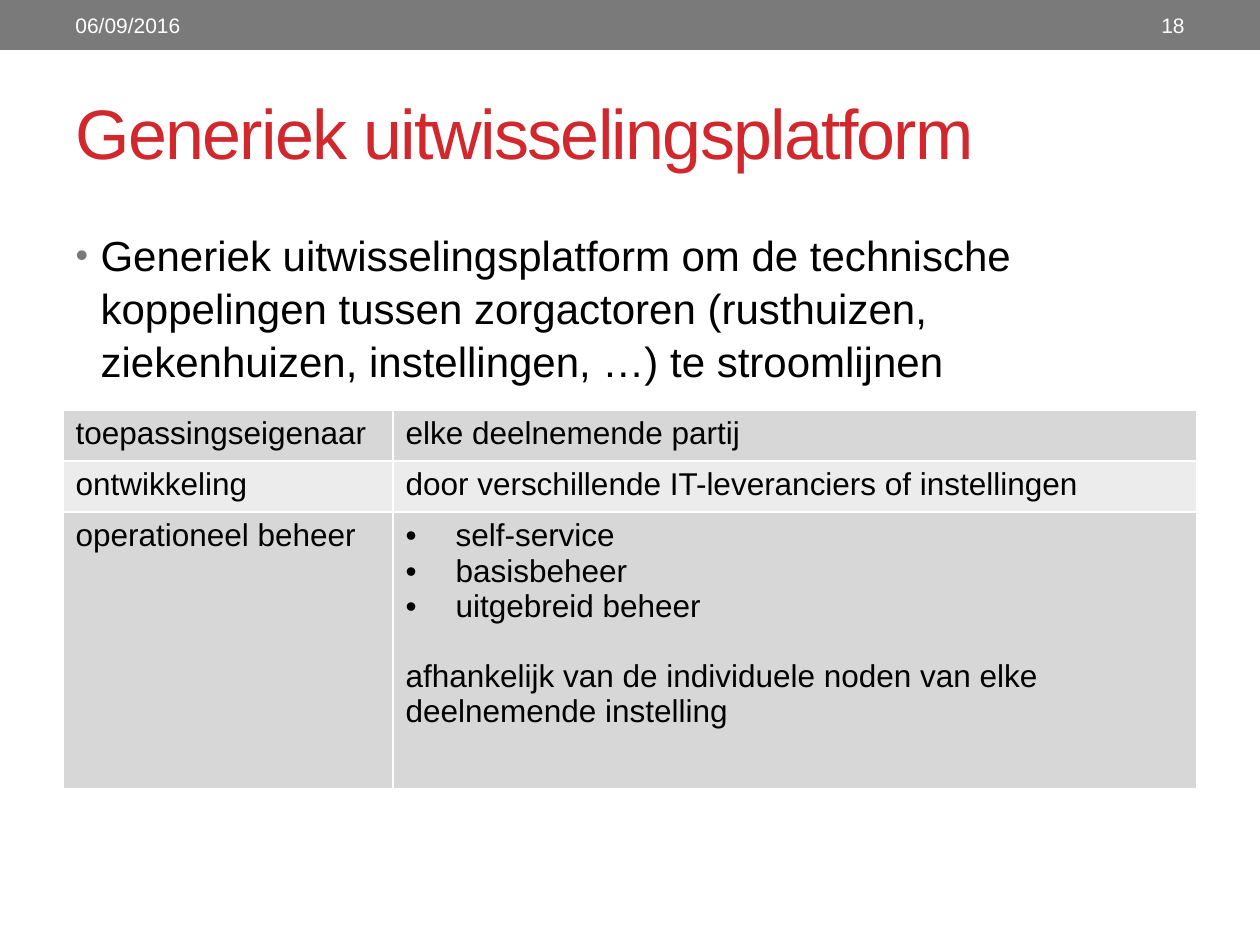
"""Build the slide on the generic exchange platform."""
from dataclasses import dataclass

from lxml.etree import SubElement
from pptx import Presentation
from pptx.dml.color import RGBColor
from pptx.enum.shapes import MSO_SHAPE
from pptx.enum.text import MSO_ANCHOR, MSO_AUTO_SIZE, PP_ALIGN
from pptx.oxml import parse_xml
from pptx.oxml.ns import nsdecls, qn
from pptx.util import Emu, Pt


@dataclass(frozen=True)
class Theme:
    """Colours and type sizes of the slide."""
    font: str = "Arial"
    banner: str = "7A7A7A"
    title: str = "D1282E"
    ink: str = "000000"
    paper: str = "FFFFFF"
    bands: tuple = ("D7D7D7", "ECECEC")
    title_size: int = 40
    body_size: int = 24
    table_size: int = 18
    header_size: int = 12


def px(length):
    """Turn pixels into EMU."""
    return Emu(round(length * 914400 / 126))


class SlideBuilder:
    """Hold the theme and the current slide."""

    def __init__(self, deck, theme):
        """Start a slide with a title and a body."""
        self.theme = theme
        self.slide = deck.slides.add_slide(deck.slide_layouts[1])

    def place(self, shape, box):
        """Move and size a shape."""
        shape.left, shape.top, shape.width, shape.height = map(px, box)

    def add_text(self, paragraph, text, size, color):
        """Add a styled run."""
        run = paragraph.add_run()
        run.text = text
        run.font.name = self.theme.font
        run.font.size = Pt(size)
        run.font.color.rgb = RGBColor.from_string(color)
        return run

    def bullet(self, paragraph, indent, color, percent=100):
        """Give a paragraph a hanging bullet."""
        properties = paragraph._p.get_or_add_pPr()
        properties.set("marL", str(px(indent)))
        properties.set("indent", str(-px(indent)))
        tint = SubElement(properties, qn("a:buClr"))
        SubElement(tint, qn("a:srgbClr"), val=color)
        SubElement(properties, qn("a:buSzPct"), val=str(percent * 1000))
        SubElement(properties, qn("a:buFont"), typeface=self.theme.font)
        SubElement(properties, qn("a:buChar"), char="•")

    def banner(self, box):
        """Draw the grey band."""
        band = self.slide.shapes.add_shape(MSO_SHAPE.RECTANGLE, *map(px, box))
        band.shadow.inherit = False
        band.fill.solid()
        band.fill.fore_color.rgb = RGBColor.from_string(self.theme.banner)
        band.line.fill.background()

    def label(self, text, box, align):
        """Put a small text in the band."""
        frame = self.slide.shapes.add_textbox(*map(px, box)).text_frame
        frame.word_wrap = True
        frame.vertical_anchor = MSO_ANCHOR.MIDDLE
        frame.paragraphs[0].alignment = align
        self.add_text(frame.paragraphs[0], text, self.theme.header_size, self.theme.paper)

    def title(self, text, box):
        """Fill the title placeholder."""
        heading = self.slide.shapes.title
        self.place(heading, box)
        frame = heading.text_frame
        frame.auto_size = MSO_AUTO_SIZE.NONE
        frame.vertical_anchor = MSO_ANCHOR.MIDDLE
        frame.paragraphs[0].alignment = PP_ALIGN.LEFT
        run = self.add_text(frame.paragraphs[0], text, self.theme.title_size, self.theme.title)
        run.font._element.set("spc", "-100")

    def body(self, text, box):
        """Fill the body placeholder with one bullet."""
        summary = self.slide.placeholders[1]
        self.place(summary, box)
        summary.text_frame.auto_size = MSO_AUTO_SIZE.NONE
        paragraph = summary.text_frame.paragraphs[0]
        paragraph.line_spacing = 1.05
        self.bullet(paragraph, 25, self.theme.banner, 85)
        self.add_text(paragraph, text, self.theme.body_size, self.theme.ink)

    def cell(self, cell, lines, fill):
        """Fill a cell; lines starting with a bullet become list items."""
        for index, line in enumerate(lines):
            frame = cell.text_frame
            paragraph = frame.add_paragraph() if index else frame.paragraphs[0]
            if line.startswith("•"):
                self.bullet(paragraph, 50, self.theme.ink)
            elif index:
                paragraph.space_before = Pt(20)
            self.add_text(paragraph, line.lstrip("•"), self.theme.table_size, self.theme.ink)
        cell.fill.solid()
        cell.fill.fore_color.rgb = RGBColor.from_string(fill)
        for position, side in enumerate("LRTB"):
            cell._tc.get_or_add_tcPr().insert(position, parse_xml(
                f'<a:ln{side} {nsdecls("a")} w="12700"><a:solidFill>'
                f'<a:srgbClr val="{self.theme.paper}"/></a:solidFill></a:ln{side}>'))

    def table(self, rows, left, top, widths, heights):
        """Draw the banded table."""
        grid = self.slide.shapes.add_table(
            len(heights), len(widths), px(left), px(top),
            px(sum(widths)), px(sum(heights))).table
        grid.first_row = grid.horz_banding = False
        for column, width in zip(grid.columns, widths):
            column.width = px(width)
        for index, (row, height) in enumerate(zip(grid.rows, heights)):
            row.height = px(height)
            for cell, lines in zip(row.cells, rows[index]):
                self.cell(cell, lines, self.theme.bands[index % 2])


def main():
    """Build and save the slide."""
    deck = Presentation()
    deck.slide_width, deck.slide_height = px(1260), px(945)
    builder = SlideBuilder(deck, Theme())
    builder.banner((0, 0, 1260, 50))
    builder.title("Generiek uitwisselingsplatform", (63, 64, 1134, 136))
    builder.body(
        "Generiek uitwisselingsplatform om de technische koppelingen tussen "
        "zorgactoren (rusthuizen, ziekenhuizen, instellingen, …) te stroomlijnen",
        (63, 221, 1134, 672))
    builder.label("18", (1050, 3, 147, 45), PP_ALIGN.RIGHT)
    builder.label("06/09/2016", (63, 3, 399, 45), PP_ALIGN.LEFT)
    responsibilities = [
        (["toepassingseigenaar"], ["elke deelnemende partij"]),
        (["ontwikkeling"], ["door verschillende IT-leveranciers of instellingen"]),
        (["operationeel beheer"],
         ["•self-service", "•basisbeheer", "•uitgebreid beheer",
          "afhankelijk van de individuele noden van elke deelnemende instelling"]),
    ]
    builder.table(responsibilities, 63, 410, (330, 804), (51, 51, 277))
    deck.save("out.pptx")


if __name__ == "__main__":
    main()
